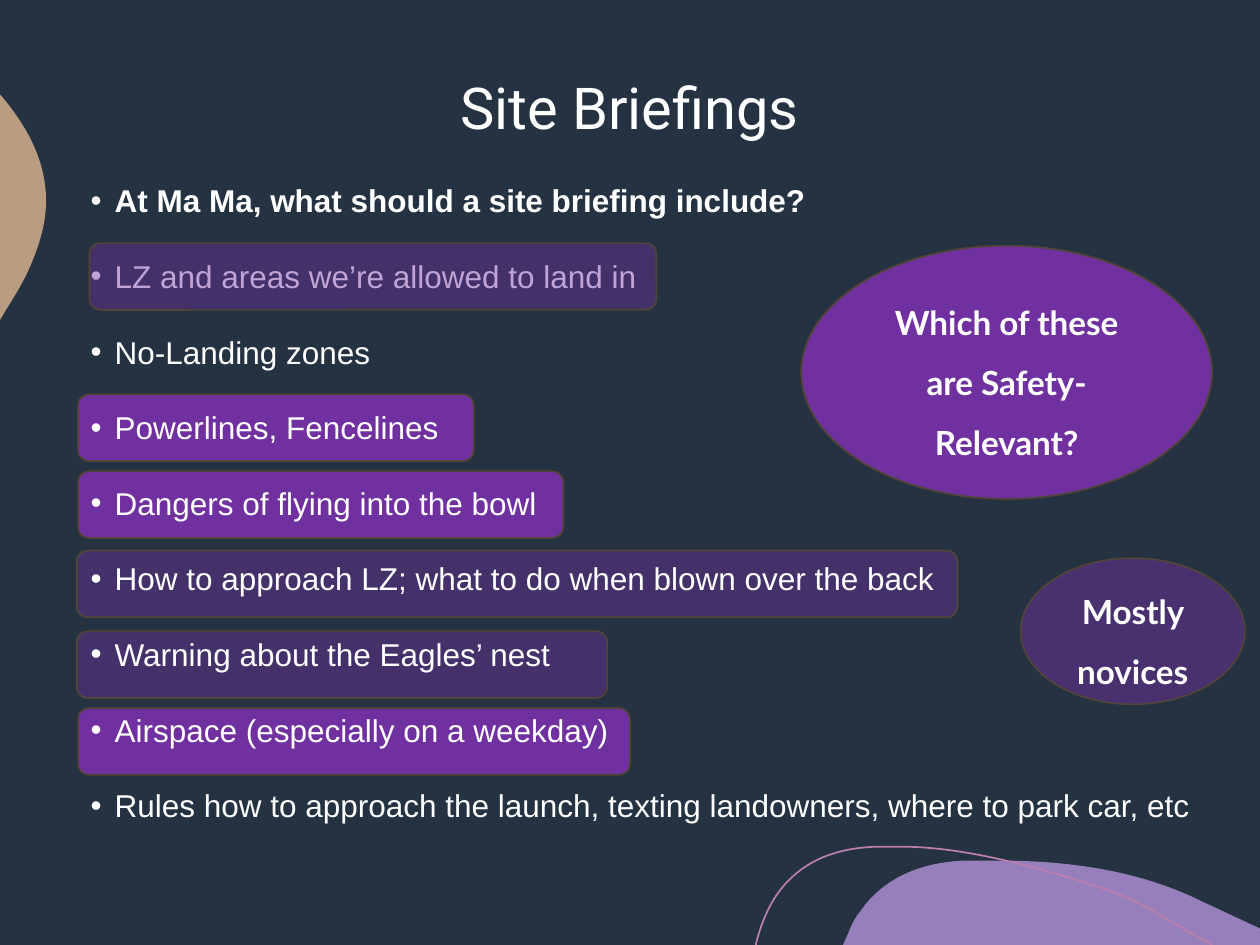
from lxml.etree import SubElement
from pptx import Presentation
from pptx.dml.color import RGBColor
from pptx.enum.shapes import MSO_SHAPE as Preset
from pptx.enum.text import MSO_ANCHOR as Anchor, MSO_AUTO_SIZE as AutoSize, PP_ALIGN as Align
from pptx.oxml.ns import qn
from pptx.util import Inches, Pt

COLORS = {
    "background": "243241",
    "lavender": "967FBA",
    "sand": "BA9C80",
    "pink": "BA7FAD",
    "purple": "7030A0",
    "outline": "524438",
    "text": "FFFFFF",
}

BRIEFING_ITEMS = [
    "At Ma Ma, what should a site briefing include?",
    "LZ and areas we’re allowed to land in",
    "No-Landing zones",
    "Powerlines, Fencelines",
    "Dangers of flying into the bowl",
    "How to approach LZ; what to do when blown over the back",
    "Warning about the Eagles’ nest",
    "Airspace (especially on a weekday)",
    "Rules how to approach the launch, texting landowners, where to park car, etc",
]

LAVENDER_HILL = [
    (7.9, 6.83),
    (8.46, 6.83, 9.03, 6.9, 9.55, 7.16),
    (9.64, 7.2, 9.74, 7.25, 9.83, 7.29),
    (10, 7.37), (10, 7.5), (6.69, 7.5), (6.74, 7.39),
    (6.76, 7.33, 6.79, 7.28, 6.83, 7.23),
    (7.04, 6.93, 7.37, 6.84, 7.67, 6.83),
    (7.75, 6.83, 7.83, 6.83, 7.9, 6.83),
]
SAND_EDGE = [
    (0, 0.75), (0.01, 0.76),
    (0.23, 1.02, 0.4, 1.33, 0.36, 1.7),
    (0.34, 1.87, 0.28, 2.03, 0.21, 2.18),
    (0.18, 2.24, 0.13, 2.33, 0.06, 2.44),
    (0, 2.54),
]
PINK_CURVE = [
    (6, 7.5), (6, 7.49),
    (6.04, 7.33, 6.1, 7.19, 6.18, 7.08),
    (6.38, 6.81, 6.67, 6.73, 6.95, 6.72),
    (7.16, 6.72),
    (7.66, 6.72, 8.25, 6.89, 8.66, 7.02),
    (9.07, 7.15, 9.2, 7.27, 9.62, 7.5),
]

SOLID_HIGHLIGHTS = [(0.62, 3.13, 3.14), (0.62, 3.74, 3.85)]
FADED_HIGHLIGHTS = [(0.61, 4.37, 6.99), (0.61, 5.01, 4.21)]
AIRSPACE_HIGHLIGHT = (0.62, 5.62, 4.38)


def color(name):
    return RGBColor.from_string(COLORS[name])


class BriefingSlide:
    heading_font, body_font, callout_font = "Roboto", "Arial", "Lato"

    def __init__(self, presentation):
        self.slide = presentation.slides.add_slide(presentation.slide_layouts[1])
        fill = self.slide.background.fill
        fill.solid()
        fill.fore_color.rgb = color("background")

    def paint(self, shape, fill=None, line=None, opacity=100):
        shape.shadow.inherit = False
        if fill:
            shape.fill.solid()
            shape.fill.fore_color.rgb = color(fill)
            if opacity < 100:
                solid = shape.fill._xPr.find(qn("a:solidFill"))
                SubElement(solid[0], qn("a:alpha"), val=str(opacity * 1000))
        else:
            shape.fill.background()
        if line:
            shape.line.color.rgb = color(line)
            shape.line.width = Pt(1)
        else:
            shape.line.fill.background()

    def format_runs(self, paragraph, font_name, size, bold=False):
        for run in paragraph.runs:
            run.font.name = font_name
            run.font.size = Pt(size)
            run.font.bold = bold
            run.font.color.rgb = color("text")

    def curve(self, segments, fill=None, line=None):
        start, *knots = [tuple(map(Inches, segment[-2:])) for segment in segments]
        builder = self.slide.shapes.build_freeform(*start)
        builder.add_line_segments(knots, close=bool(fill))
        shape = builder.convert_to_shape()
        line_steps = list(shape._element.iter(qn("a:lnTo")))
        for step, segment in zip(line_steps, segments[1:]):
            if len(segment) == 6:
                step.tag = qn("a:cubicBezTo")
                step.remove(step[0])
                for x, y in zip(segment[::2], segment[1::2]):
                    SubElement(step, qn("a:pt"), x=str(Inches(x) - shape.left),
                               y=str(Inches(y) - shape.top))
        self.paint(shape, fill, line)

    def block(self, preset, left, top, width, height, opacity=100):
        shape = self.slide.shapes.add_shape(
            preset, Inches(left), Inches(top), Inches(width), Inches(height))
        self.paint(shape, "purple", "outline", opacity)
        return shape

    def highlight(self, left, top, width, opacity=100):
        self.block(Preset.ROUNDED_RECTANGLE, left, top, width, 0.53, opacity)

    def callout(self, text, left, top, width, height, opacity=100):
        text_frame = self.block(Preset.OVAL, left, top, width, height, opacity).text_frame
        text_frame.text = text
        text_frame.word_wrap = True
        text_frame.vertical_anchor = Anchor.MIDDLE
        paragraph = text_frame.paragraphs[0]
        paragraph.alignment = Align.CENTER
        paragraph.line_spacing = 1.5
        self.format_runs(paragraph, self.callout_font, 19, bold=True)

    def place(self, placeholder, left, top, width, height, anchor):
        placeholder.left, placeholder.top = Inches(left), Inches(top)
        placeholder.width, placeholder.height = Inches(width), Inches(height)
        element = placeholder._element
        element.getparent().append(element)
        text_frame = placeholder.text_frame
        text_frame.auto_size = AutoSize.NONE
        text_frame.vertical_anchor = anchor
        return text_frame

    def title(self, text):
        text_frame = self.place(self.slide.shapes.title, 0.62, 0.4, 8.75, 0.96, Anchor.MIDDLE)
        text_frame.text = text
        paragraph = text_frame.paragraphs[0]
        paragraph.alignment = Align.CENTER
        paragraph.line_spacing = 0.9
        self.format_runs(paragraph, self.heading_font, 33)

    def bullets(self, items):
        text_frame = self.place(self.slide.placeholders[1], 0.62, 1.36, 9, 7.98, Anchor.TOP)
        text_frame.margin_top = Inches(0.08)
        text_frame.text = "\n".join(items)
        for index, paragraph in enumerate(text_frame.paragraphs):
            properties = paragraph._p.get_or_add_pPr()
            properties.set("marL", str(Inches(0.19)))
            properties.set("indent", str(-Inches(0.19)))
            SubElement(properties, qn("a:buChar"), char="•")
            paragraph.space_before = Pt(21.6 if index else 0)
            paragraph.space_after = Pt(0)
            paragraph.line_spacing = 1.0
            self.format_runs(paragraph, self.body_font, 18, bold=index == 0)


def main():
    presentation = Presentation()
    presentation.slide_width, presentation.slide_height = Inches(10), Inches(7.5)
    briefing = BriefingSlide(presentation)
    briefing.curve(LAVENDER_HILL, fill="lavender")
    briefing.curve(SAND_EDGE, fill="sand")
    briefing.curve(PINK_CURVE, line="pink")
    for box in SOLID_HIGHLIGHTS:
        briefing.highlight(*box)
    for box in FADED_HIGHLIGHTS:
        briefing.highlight(*box, opacity=44)
    briefing.highlight(*AIRSPACE_HIGHLIGHT)
    briefing.title("Site Briefings")
    briefing.bullets(BRIEFING_ITEMS)
    briefing.callout("Which of these are Safety-Relevant?", 6.36, 1.95, 3.26, 2.01)
    briefing.callout("Mostly novices", 8.1, 4.43, 1.78, 1.16, opacity=48)
    briefing.highlight(0.71, 1.93, 4.5, opacity=44)
    presentation.save("out.pptx")


if __name__ == "__main__":
    main()
